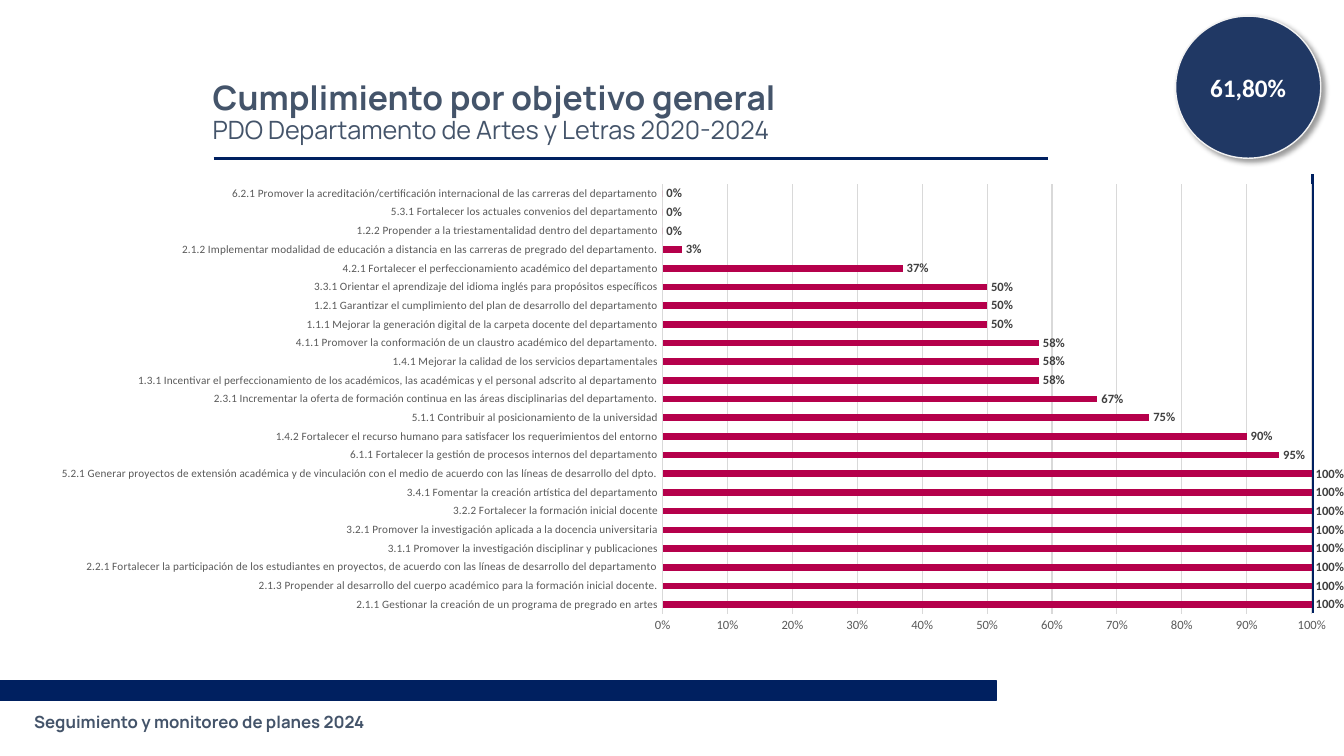
from dataclasses import dataclass

from lxml.etree import SubElement
from pptx import Presentation
from pptx.chart.data import CategoryChartData
from pptx.dml.color import RGBColor
from pptx.enum.chart import XL_CHART_TYPE, XL_LABEL_POSITION, XL_TICK_MARK
from pptx.enum.shapes import MSO_CONNECTOR, MSO_SHAPE
from pptx.enum.text import MSO_ANCHOR, MSO_AUTO_SIZE, PP_ALIGN
from pptx.oxml import parse_xml
from pptx.oxml.ns import nsdecls, qn
from pptx.util import Inches, Pt

# Content
TITLE = "Cumplimiento por objetivo general"
SUBTITLE = "PDO Departamento de Artes y Letras 2020-2024"
FOOTER = "Seguimiento y monitoreo de planes 2024"
TOTAL = "61,80%"
GOALS = [  # from the bottom bar to the top one
    ("2.1.1 Gestionar la creación de un programa de pregrado en artes", 1),
    ("2.1.3 Propender al desarrollo del cuerpo académico para la formación inicial docente.", 1),
    ("2.2.1 Fortalecer la participación de los estudiantes en proyectos, de acuerdo con las "
     "líneas de desarrollo del departamento", 1),
    ("3.1.1 Promover la investigación disciplinar y publicaciones", 1),
    ("3.2.1 Promover la investigación aplicada a la docencia universitaria", 1),
    ("3.2.2 Fortalecer la formación inicial docente", 1),
    ("3.4.1 Fomentar la creación artística del departamento", 1),
    ("5.2.1 Generar proyectos de extensión académica y de vinculación con el medio de acuerdo "
     "con las líneas de desarrollo del dpto.", 1),
    ("6.1.1 Fortalecer la gestión de procesos internos del departamento", 0.95),
    ("1.4.2 Fortalecer el recurso humano para satisfacer los requerimientos del entorno", 0.9),
    ("5.1.1 Contribuir al posicionamiento de la universidad", 0.75),
    ("2.3.1 Incrementar la oferta de formación continua en las áreas disciplinarias del "
     "departamento.", 0.67),
    ("1.3.1 Incentivar el perfeccionamiento de los académicos, las académicas y el personal "
     "adscrito al departamento", 0.58),
    ("1.4.1 Mejorar la calidad de los servicios departamentales", 0.58),
    ("4.1.1 Promover la conformación de un claustro académico del departamento.", 0.58),
    ("1.1.1 Mejorar la generación digital de la carpeta docente del departamento", 0.5),
    ("1.2.1 Garantizar el cumplimiento del plan de desarrollo del departamento", 0.5),
    ("3.3.1 Orientar el aprendizaje del idioma inglés para propósitos específicos", 0.5),
    ("4.2.1 Fortalecer el perfeccionamiento académico del departamento", 0.37),
    ("2.1.2 Implementar modalidad de educación a distancia en las carreras de pregrado del "
     "departamento.", 0.03),
    ("1.2.2 Propender a la triestamentalidad dentro del departamento", 0),
    ("5.3.1 Fortalecer los actuales convenios del departamento", 0),
    ("6.2.1 Promover la acreditación/certificación internacional de las carreras del "
     "departamento", 0),
]
RULES = [(13.02, 1.73, 13.02, 6.08), (2.12, 1.57, 10.39, 1.57)]
PLOT = {"x": 0.495, "y": 0.021, "w": 0.485, "h": 0.909}


@dataclass(frozen=True)
class Theme:
    navy: str = "002060"
    badge: str = "203864"
    badge_line: str = "F2F2F2"
    heading: str = "44546A"
    bar: str = "B5004B"
    axis: str = "595959"
    grid: str = "D9D9D9"
    value: str = "404040"
    white: str = "FFFFFF"
    head_font: str = "Manrope"
    body_font: str = "Calibri"
    title_size: int = 24
    large: int = 18
    footer_size: int = 12
    label_size: int = 9
    goal_size: int = 8


T = Theme()


def rgb(color):
    return RGBColor.from_string(color)


def set_font(font, name, size, color, bold=False):
    font.name, font.size, font.bold = name, Pt(size), bold
    font.color.rgb = rgb(color)


def set_line(line, color, width):
    line.color.rgb = rgb(color)
    line.width = Pt(width)


def add_panel(slide, kind, box, fill, line=None):
    sp = slide.shapes.add_shape(kind, *map(Inches, box))
    sp.shadow.inherit = False
    sp.fill.solid()
    sp.fill.fore_color.rgb = rgb(fill)
    if line:
        set_line(sp.line, line, 1)
    else:
        sp.line.fill.background()
    return sp


def write(sp, text, font, size, color, align):
    tf = sp.text_frame
    tf.word_wrap = True
    tf.vertical_anchor = MSO_ANCHOR.MIDDLE
    p = tf.paragraphs[0]
    p.text, p.alignment = text, align
    set_font(p.font, font, size, color, True)


def add_title(slide):
    sp = slide.shapes.title
    sp.left, sp.top, sp.width, sp.height = map(Inches, (2.01, 0.4, 10.41, 1.45))
    tf = sp.text_frame
    tf.text = f"{TITLE}\n{SUBTITLE}"
    tf.auto_size = MSO_AUTO_SIZE.NONE
    tf.vertical_anchor = MSO_ANCHOR.MIDDLE
    for p, size, bold in zip(tf.paragraphs, (T.title_size, T.large), (True, False)):
        p.alignment, p.line_spacing = PP_ALIGN.LEFT, 0.9
        set_font(p.font, T.head_font, size, T.heading, bold)


def add_rule(slide, ends):
    line = slide.shapes.add_connector(MSO_CONNECTOR.STRAIGHT, *map(Inches, ends))
    set_line(line.line, T.navy, 2.25)
    SubElement(line._element.spPr, qn("a:effectLst"))


def add_goal_chart(slide):
    data = CategoryChartData(number_format="0%")
    data.categories = [goal for goal, _ in GOALS]
    data.add_series("Series 1", [value for _, value in GOALS])
    box = map(Inches, (0, 1.73, 13.33, 4.69))
    chart = slide.shapes.add_chart(XL_CHART_TYPE.BAR_CLUSTERED, *box, data).chart
    chart.has_legend = chart.has_title = False
    chart.font.name, chart.font.size = T.body_font, Pt(10)

    # Bars and their values
    plot = chart.plots[0]
    plot.gap_width, plot.vary_by_categories = 182, False
    series = plot.series[0]
    series.format.fill.solid()
    series.format.fill.fore_color.rgb = rgb(T.bar)
    labels = series.data_labels
    labels.show_value = True
    labels.position = XL_LABEL_POSITION.OUTSIDE_END
    labels.number_format, labels.number_format_is_linked = "0%", False
    set_font(labels.font, T.body_font, T.label_size, T.value, True)

    # Axes
    goals, share = chart.category_axis, chart.value_axis
    for axis, size in ((goals, T.goal_size), (share, T.label_size)):
        axis.major_tick_mark = axis.minor_tick_mark = XL_TICK_MARK.NONE
        set_font(axis.tick_labels.font, T.body_font, size, T.axis)
    set_line(goals.format.line, T.grid, 0.75)
    share.minimum_scale, share.maximum_scale, share.major_unit = 0, 1, 0.1
    share.tick_labels.number_format = "0%"
    share.tick_labels.number_format_is_linked = False
    share.format.line.fill.background()
    set_line(share.major_gridlines.format.line, T.grid, 0.75)

    # Fixed inner plot area
    area = chart._chartSpace.chart.plotArea
    for old in area.findall(qn("c:layout")):
        area.remove(old)
    sizes = "".join(f'<c:{key} val="{val}"/>' for key, val in PLOT.items())
    area.insert(0, parse_xml(
        f'<c:layout {nsdecls("c")}><c:manualLayout><c:layoutTarget val="inner"/>'
        f'<c:xMode val="edge"/><c:yMode val="edge"/>{sizes}</c:manualLayout></c:layout>'))


def add_badge(slide):
    sp = add_panel(slide, MSO_SHAPE.OVAL, (11.66, 0.16, 1.44, 1.41), T.badge, T.badge_line)
    write(sp, TOTAL, T.body_font, T.large, T.white, PP_ALIGN.CENTER)
    effects = sp._element.spPr.find(qn("a:effectLst"))
    effects.append(parse_xml(
        f'<a:outerShdw {nsdecls("a")} blurRad="{Pt(4)}" dist="{Pt(3)}" dir="2700000" '
        'algn="tl" rotWithShape="0"><a:srgbClr val="000000"><a:alpha val="40000"/>'
        '</a:srgbClr></a:outerShdw>'))


def main():
    prs = Presentation()
    prs.slide_width, prs.slide_height = Inches(13.33), Inches(7.5)
    slide = prs.slides.add_slide(prs.slide_layouts[5])

    # Footer band and caption
    add_panel(slide, MSO_SHAPE.RECTANGLE, (0, 6.75, 9.88, 0.2), T.navy, T.navy)
    caption = add_panel(slide, MSO_SHAPE.RECTANGLE, (0.24, 6.97, 4.07, 0.38), T.white)
    write(caption, FOOTER, T.head_font, T.footer_size, T.heading, PP_ALIGN.LEFT)

    # Heading, rules, chart and overall score
    add_title(slide)
    for ends in RULES:
        add_rule(slide, ends)
    add_goal_chart(slide)
    add_badge(slide)
    prs.save("out.pptx")


if __name__ == "__main__":
    main()
